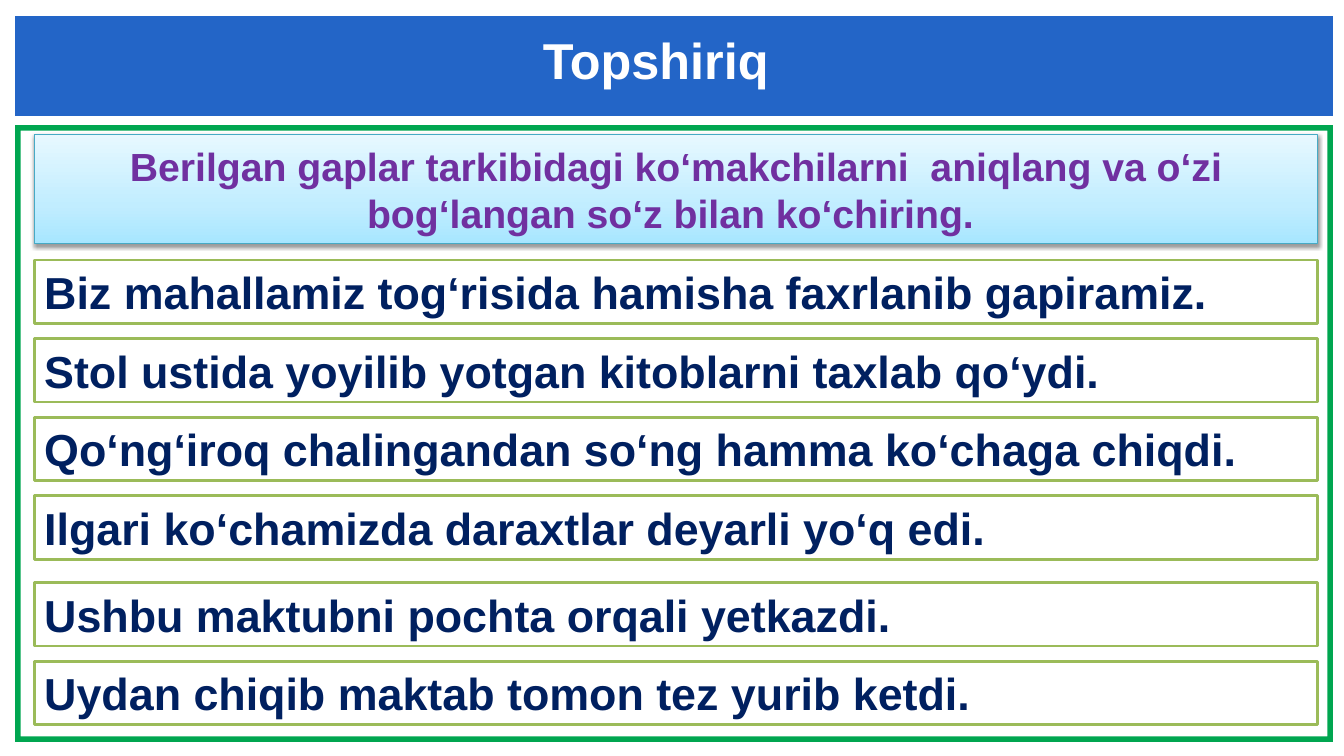
from copy import deepcopy

from lxml.etree import SubElement
from pptx import Presentation
from pptx.dml.color import RGBColor
from pptx.enum.shapes import MSO_SHAPE
from pptx.enum.text import MSO_ANCHOR, PP_ALIGN
from pptx.oxml.ns import qn
from pptx.util import Inches, Pt

SENTENCES = [
    "Biz mahallamiz tog‘risida hamisha faxrlanib gapiramiz.",
    "Stol ustida yoyilib yotgan kitoblarni taxlab qo‘ydi.",
    "Qo‘ng‘iroq chalingandan so‘ng hamma ko‘chaga chiqdi.",
    "Ilgari ko‘chamizda daraxtlar deyarli yo‘q edi.",
    "Ushbu maktubni pochta orqali yetkazdi.",
    "Uydan chiqib maktab tomon tez yurib ketdi.",
]
TASK = ("Berilgan gaplar tarkibidagi ko‘makchilarni  aniqlang va o‘zi "
        "bog‘langan so‘z bilan ko‘chiring. ")


def color(value):
    return RGBColor.from_string(value)


def add_box(slide, kind, left, top, width, height, fill=None, line=None, line_width=1):
    shape = slide.shapes.add_shape(
        kind, Inches(left), Inches(top), Inches(width), Inches(height))
    shape.shadow.inherit = False
    if fill:
        shape.fill.solid()
        shape.fill.fore_color.rgb = color(fill)
    if line:
        shape.line.color.rgb = color(line)
        shape.line.width = Pt(line_width)
    else:
        shape.line.fill.background()
    return shape


def write(shape, text, size, text_color, alignment, anchor=MSO_ANCHOR.MIDDLE):
    frame = shape.text_frame
    frame.word_wrap = True
    frame.vertical_anchor = anchor
    paragraph = frame.paragraphs[0]
    paragraph.alignment = alignment
    run = paragraph.add_run()
    run.text = text
    run.font.name = "Arial"
    run.font.size = Pt(size)
    run.font.bold = True
    run.font.color.rgb = color(text_color)


def set_gradient(shape, stops):
    shape.fill.gradient()
    shape.fill.gradient_angle = 90
    first = shape.fill._xPr.find(".//" + qn("a:gs"))
    first.addnext(deepcopy(first))
    for stop, (position, value) in zip(shape.fill.gradient_stops, stops):
        stop.position = position
        stop.color.rgb = color(value)


def add_shadow(shape):
    effects = shape._element.spPr.find(qn("a:effectLst"))
    shadow = SubElement(effects, qn("a:outerShdw"), blurRad=str(Pt(3.1)),
                        dist=str(Pt(1.6)), dir="5400000", rotWithShape="0")
    black = SubElement(shadow, qn("a:srgbClr"), val="000000")
    SubElement(black, qn("a:alpha"), val="38000")


def add_header(slide, left, top, width, height):
    add_box(slide, MSO_SHAPE.RECTANGLE, left, top, width, height, "2365C7")
    title = slide.shapes.add_textbox(
        Inches(left + 0.53), Inches(top + 0.13), Inches(11.65), Inches(0.71))
    frame = title.text_frame
    frame.margin_left = frame.margin_right = frame.margin_top = frame.margin_bottom = 0
    write(title, "Topshiriq", 36, "FFFFFF", PP_ALIGN.CENTER, MSO_ANCHOR.TOP)


def add_task(slide, left, top, width, height):
    task = add_box(slide, MSO_SHAPE.RECTANGLE, left, top, width, height,
                   line="46AAC5", line_width=0.75)
    set_gradient(task, [(0, "A7E6FF"), (0.35, "C1EDFF"), (1, "E7F8FF")])
    add_shadow(task)
    write(task, TASK, 28, "7030A0", PP_ALIGN.CENTER)


def add_sentences(slide, left, top, width):
    pitch, group_size, group_gap = 0.78, 4, 0.08
    for index, sentence in enumerate(SENTENCES):
        row_top = top + index * pitch + index // group_size * group_gap
        row = add_box(slide, MSO_SHAPE.RECTANGLE, left, row_top, width, 0.63,
                      "FFFFFF", "9BBB59", 2)
        write(row, sentence, 32, "002060", PP_ALIGN.LEFT)


def add_exercise(slide, left, top, width, height):
    border = add_box(slide, MSO_SHAPE.FRAME, left, top, width, height, "00A650")
    border.adjustments[0] = 0.055 / height
    inner_left, inner_width = left + 0.19, 12.73
    add_task(slide, inner_left, top + 0.09, inner_width, 1.09)
    add_sentences(slide, inner_left, top + 1.34, inner_width)


def main():
    presentation = Presentation()
    presentation.slide_width = Inches(13.33)
    presentation.slide_height = Inches(7.5)
    slide = presentation.slides.add_slide(presentation.slide_layouts[6])
    add_header(slide, 0.15, 0.16, 13.07, 0.99)
    add_exercise(slide, 0.15, 1.24, 13.07, 6.12)
    presentation.save("out.pptx")


if __name__ == "__main__":
    main()
